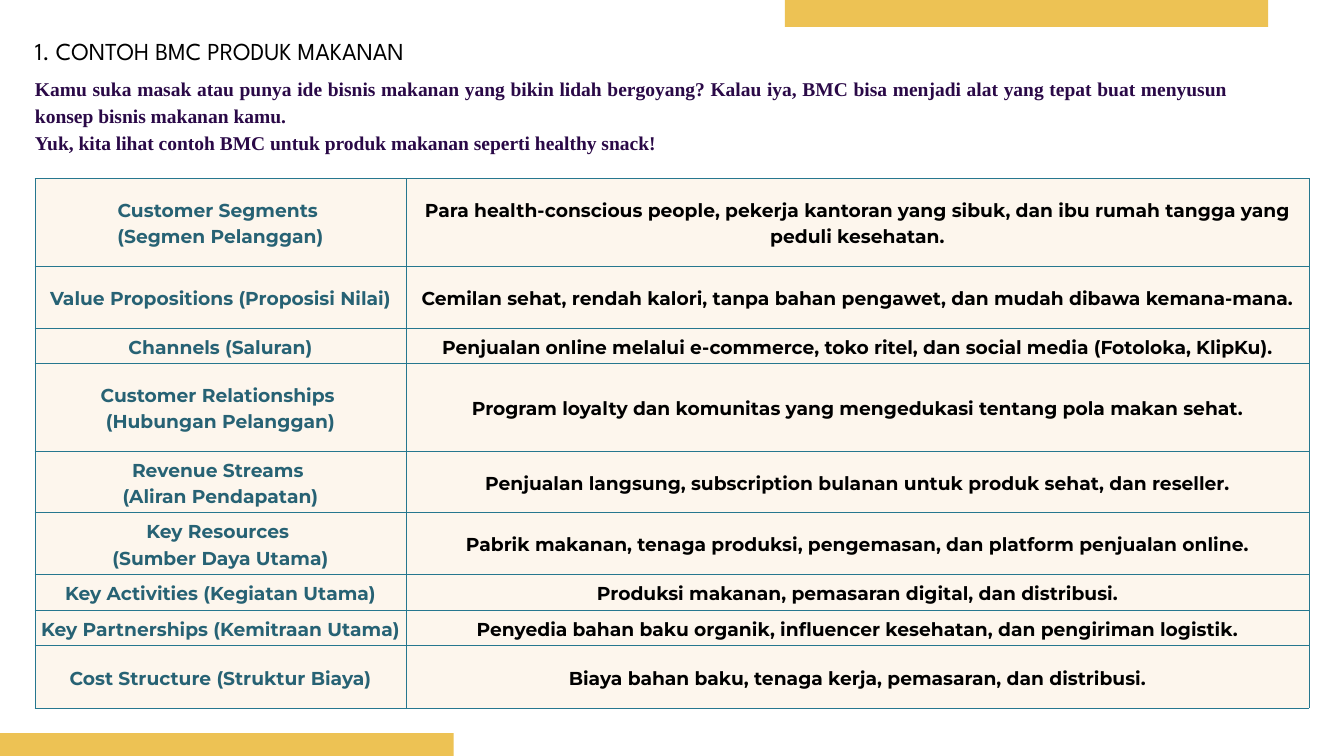
"""Build a slide with a business model canvas table for a food product."""
from lxml import etree
from pptx import Presentation
from pptx import util as u
from pptx.dml import color
from pptx.enum import shapes, text
from pptx.oxml import ns

COLORS = {"gold": "EDC254", "cream": "FDF6ED", "border": "26778F",
          "teal": "276274", "black": "000000", "purple": "2A0947"}

TITLE_FORMAT = {"name": "League Spartan", "size": u.Pt(26.1), "bold": False}
INTRO_FORMAT = {"name": "Times New Roman", "size": u.Pt(20.9), "bold": True}
CELL_FORMAT = {"name": "Montserrat", "size": u.Pt(20), "bold": True}

TITLE = "1. CONTOH BMC PRODUK MAKANAN"
INTRO = [
    "Kamu suka masak atau punya ide bisnis makanan yang bikin lidah bergoyang? Kalau iya, "
    "BMC bisa menjadi alat yang tepat buat menyusun konsep bisnis makanan kamu. ",
    "Yuk, kita lihat contoh BMC untuk produk makanan seperti healthy snack!",
]
COLUMN_WIDTHS = [5.52, 13.44]
CANVAS_ROWS = [
    (1.3, ["Customer Segments ", "(Segmen Pelanggan)"],
     "Para health-conscious people, pekerja kantoran yang sibuk, dan ibu rumah tangga yang peduli kesehatan."),
    (0.92, ["Value Propositions (Proposisi Nilai)"],
     "Cemilan sehat, rendah kalori, tanpa bahan pengawet, dan mudah dibawa kemana-mana."),
    (0.53, ["Channels (Saluran)"],
     "Penjualan online melalui e-commerce, toko ritel, dan social media (Fotoloka, KlipKu)."),
    (1.3, ["Customer Relationships ", "(Hubungan Pelanggan)"],
     "Program loyalty dan komunitas yang mengedukasi tentang pola makan sehat."),
    (0.92, ["Revenue Streams ", "(Aliran Pendapatan)"],
     "Penjualan langsung, subscription bulanan untuk produk sehat, dan reseller."),
    (0.92, ["Key Resources ", "(Sumber Daya Utama)"],
     "Pabrik makanan, tenaga produksi, pengemasan, dan platform penjualan online."),
    (0.53, ["Key Activities (Kegiatan Utama)"],
     "Produksi makanan, pemasaran digital, dan distribusi."),
    (0.53, ["Key Partnerships (Kemitraan Utama)"],
     "Penyedia bahan baku organik, influencer kesehatan, dan pengiriman logistik."),
    (0.93, ["Cost Structure (Struktur Biaya)"],
     "Biaya bahan baku, tenaga kerja, pemasaran, dan distribusi."),
]


def rgb(name):
    """Return the named colour."""
    return color.RGBColor.from_string(COLORS[name])


def set_attributes(target, values):
    """Set each attribute of the target from a dict."""
    for name, value in values.items():
        setattr(target, name, value)


def write_paragraphs(frame, lines, font_format, color_name, alignment, line_spacing):
    """Write formatted lines into a text frame, one paragraph each."""
    for index, line in enumerate(lines):
        paragraph = frame.paragraphs[0] if index == 0 else frame.add_paragraph()
        set_attributes(paragraph, {"alignment": alignment, "line_spacing": u.Pt(line_spacing),
                                   "space_before": u.Pt(0), "space_after": u.Pt(0)})
        run = paragraph.add_run()
        run.text = line
        set_attributes(run.font, font_format)
        run.font.color.rgb = rgb(color_name)


def place_frame(shape, box):
    """Move a text shape to the box and give it plain wrapping without margins."""
    set_attributes(shape, dict(zip(("left", "top", "width", "height"), map(u.Inches, box))))
    set_attributes(shape.text_frame, {
        "margin_left": 0, "margin_right": 0, "margin_top": 0, "margin_bottom": 0,
        "word_wrap": True, "auto_size": text.MSO_AUTO_SIZE.SHAPE_TO_FIT_TEXT,
        "vertical_anchor": text.MSO_ANCHOR.TOP})
    return shape.text_frame


def add_bar(slide, box):
    """Add a gold bar that bleeds over the slide edge."""
    bar = slide.shapes.add_shape(shapes.MSO_SHAPE.RECTANGLE, *map(u.Inches, box))
    bar.shadow.inherit = False
    bar.fill.solid()
    bar.fill.fore_color.rgb = rgb("gold")
    bar.line.fill.background()


def add_heading(slide, box):
    """Place the title in the box."""
    frame = place_frame(slide.shapes.title, box)
    write_paragraphs(frame, [TITLE], TITLE_FORMAT, "black", text.PP_ALIGN.LEFT, 36.6)


def add_intro(slide, box):
    """Place the introduction in the box."""
    frame = place_frame(slide.shapes.add_textbox(*map(u.Inches, box)), box)
    write_paragraphs(frame, INTRO, INTRO_FORMAT, "purple", text.PP_ALIGN.JUSTIFY, 29.3)


def add_borders(cell):
    """Draw a thin line on the four sides of a cell."""
    properties = cell._tc.get_or_add_tcPr()
    for side in ("lnL", "lnR", "lnT", "lnB"):
        line = etree.SubElement(properties, ns.qn(f"a:{side}"), w=str(u.Pt(0.75)))
        fill = etree.SubElement(line, ns.qn("a:solidFill"))
        etree.SubElement(fill, ns.qn("a:srgbClr"), val=COLORS["border"])


def fill_cell(cell, lines, color_name):
    """Write and format one table cell."""
    margin = u.Inches(0.04)
    set_attributes(cell, {"margin_left": margin, "margin_right": margin, "margin_top": margin,
                          "margin_bottom": margin, "vertical_anchor": text.MSO_ANCHOR.MIDDLE})
    add_borders(cell)
    cell.fill.solid()
    cell.fill.fore_color.rgb = rgb("cream")
    write_paragraphs(cell.text_frame, lines, CELL_FORMAT, color_name, text.PP_ALIGN.CENTER, 28)


def add_canvas_table(slide, box):
    """Add the business model canvas table in the box."""
    table = slide.shapes.add_table(len(CANVAS_ROWS), len(COLUMN_WIDTHS), *map(u.Inches, box)).table
    set_attributes(table, {"first_row": False, "horz_banding": False})
    for column, width in zip(table.columns, COLUMN_WIDTHS):
        column.width = u.Inches(width)
    for index, (height, block, description) in enumerate(CANVAS_ROWS):
        table.rows[index].height = u.Inches(height)
        fill_cell(table.cell(index, 0), block, "teal")
        fill_cell(table.cell(index, 1), [description], "black")


def main():
    """Build and save the presentation."""
    presentation = Presentation()
    presentation.slide_width = u.Inches(20)
    presentation.slide_height = u.Inches(11.25)
    slide = presentation.slides.add_slide(presentation.slide_layouts[5])
    add_bar(slide, (-0.44, 10.91, 7.19, 0.7))
    add_bar(slide, (11.68, -0.3, 7.19, 0.7))
    add_canvas_table(slide, (0.52, 2.66, 18.96, 7.89))
    add_heading(slide, (0.52, 0.47, 7.52, 0.48))
    add_intro(slide, (0.52, 1.08, 17.75, 1.61))
    presentation.save("out.pptx")


if __name__ == "__main__":
    main()
